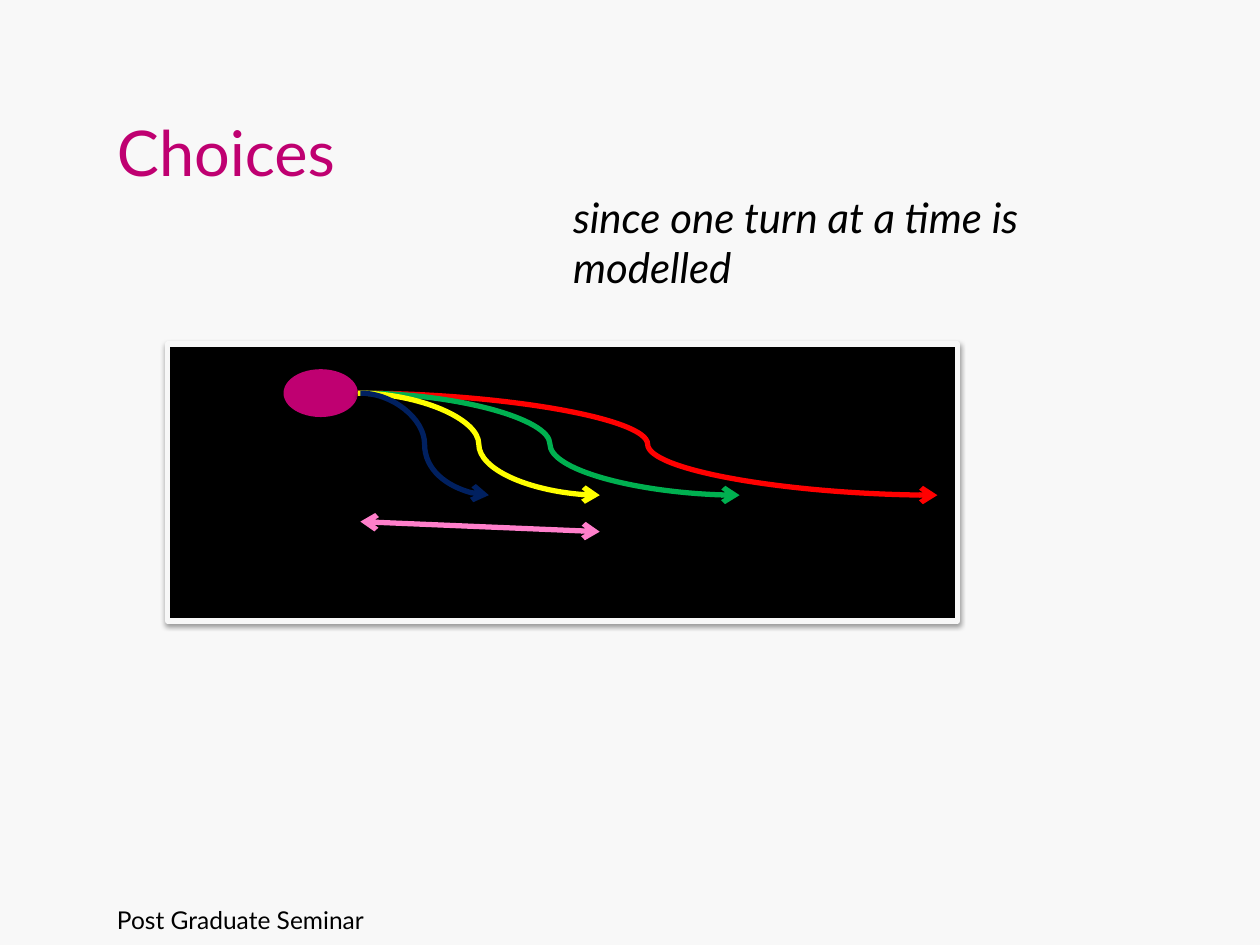
from dataclasses import dataclass

from lxml import etree
from pptx import Presentation
from pptx.dml.color import RGBColor
from pptx.enum.shapes import MSO_CONNECTOR, MSO_SHAPE
from pptx.enum.text import MSO_ANCHOR
from pptx.oxml.ns import qn
from pptx.util import Inches, Pt

CURVE, STRAIGHT = MSO_CONNECTOR.CURVE, MSO_CONNECTOR.STRAIGHT
RECTANGLE, OVAL = MSO_SHAPE.RECTANGLE, MSO_SHAPE.OVAL
TOP, BOTTOM = MSO_ANCHOR.TOP, MSO_ANCHOR.BOTTOM


@dataclass(frozen=True)
class Theme:
    font: str = "Lato"
    paper: str = "F8F8F8"
    ink: str = "000000"
    accent: str = "BF0071"
    pink: str = "FF7FCB"
    red: str = "FF0000"
    green: str = "00B050"
    yellow: str = "FFFF00"
    navy: str = "002060"
    title_size: int = 36
    remark_size: int = 24
    footer_size: int = 14
    line_width: int = 3


THEME = Theme()


def rgb(value):
    return RGBColor.from_string(value)


def add_text(slide, box, text, *, size, color=THEME.ink, italic=False,
             anchor=TOP, wrap=True):
    frame = slide.shapes.add_textbox(*map(Inches, box)).text_frame
    frame.word_wrap = wrap
    frame.vertical_anchor = anchor
    run = frame.paragraphs[0].add_run()
    run.text = text
    run.font.name = THEME.font
    run.font.size = Pt(size)
    run.font.italic = italic
    run.font.color.rgb = rgb(color)


def add_shadow(part, opacity, distance):
    """Drop a soft black shadow straight down; call after the line is set."""
    properties = part._element.spPr
    effects = properties.find(qn("a:effectLst"))
    if effects is None:
        effects = etree.SubElement(properties, qn("a:effectLst"))
    shadow = etree.SubElement(effects, qn("a:outerShdw"), blurRad=str(Pt(3.1)),
                              dist=str(Pt(distance)), dir="5400000", rotWithShape="0")
    black = etree.SubElement(shadow, qn("a:srgbClr"), val=THEME.ink)
    etree.SubElement(black, qn("a:alpha"), val=str(opacity * 1000))


def add_filled(slide, kind, box, fill):
    shape = slide.shapes.add_shape(kind, *map(Inches, box))
    shape.shadow.inherit = False
    shape.fill.solid()
    shape.fill.fore_color.rgb = rgb(fill)
    shape.line.fill.background()
    return shape


def add_arrow(slide, kind, start, end, color, ends=("tailEnd",)):
    arrow = slide.shapes.add_connector(kind, *map(Inches, (*start, *end)))
    arrow.line.color.rgb = rgb(color)
    arrow.line.width = Pt(THEME.line_width)
    for end_tag in ends:
        etree.SubElement(arrow.line._get_or_add_ln(), qn(f"a:{end_tag}"), type="arrow")
    add_shadow(arrow, opacity=35, distance=1.8)


def add_choices_diagram(slide, box):
    """Paths of different reach fan out from one agent on a dark panel."""
    left, top, _, _ = box
    panel = add_filled(slide, RECTANGLE, box, THEME.ink)
    panel.line.color.rgb = rgb(THEME.paper)
    panel.line.width = Pt(THEME.line_width)
    add_shadow(panel, opacity=38, distance=1.6)

    add_filled(slide, OVAL, (left + 0.92, top + 0.2, 0.59, 0.38), THEME.accent)

    agent_edge, path_start = left + 1.51, left + 1.53
    start_y, end_y = top + 0.39, top + 1.2
    paths = [
        (agent_edge, 6.11, THEME.red),
        (path_start, 4.54, THEME.green),
        (agent_edge, 3.43, THEME.yellow),
        (path_start, 2.55, THEME.navy),
    ]
    for start_x, reach, color in paths:
        add_arrow(slide, CURVE, (start_x, start_y), (left + reach, end_y), color)

    add_arrow(slide, STRAIGHT, (path_start, top + 1.41), (left + 3.43, top + 1.49),
              THEME.pink, ends=("headEnd", "tailEnd"))


def build_choices_slide(deck):
    slide = deck.slides.add_slide(deck.slide_layouts[6])
    slide.background.fill.solid()
    slide.background.fill.fore_color.rgb = rgb(THEME.paper)

    add_text(slide, (0.83, 7.13, 6.93, 0.52), "Post Graduate Seminar",
             size=THEME.footer_size)
    add_text(slide, (0.83, 0.3, 6.77, 1.25), "Choices", size=THEME.title_size,
             color=THEME.accent, anchor=BOTTOM)
    add_text(slide, (4.45, 1.47, 5.04, 0.5), "since one turn at a time is modelled",
             size=THEME.remark_size, italic=True)
    add_choices_diagram(slide, (1.33, 2.73, 6.27, 2.2))


def main():
    deck = Presentation()
    deck.slide_width, deck.slide_height = Inches(10), Inches(7.5)
    build_choices_slide(deck)
    deck.save("out.pptx")


if __name__ == "__main__":
    main()
